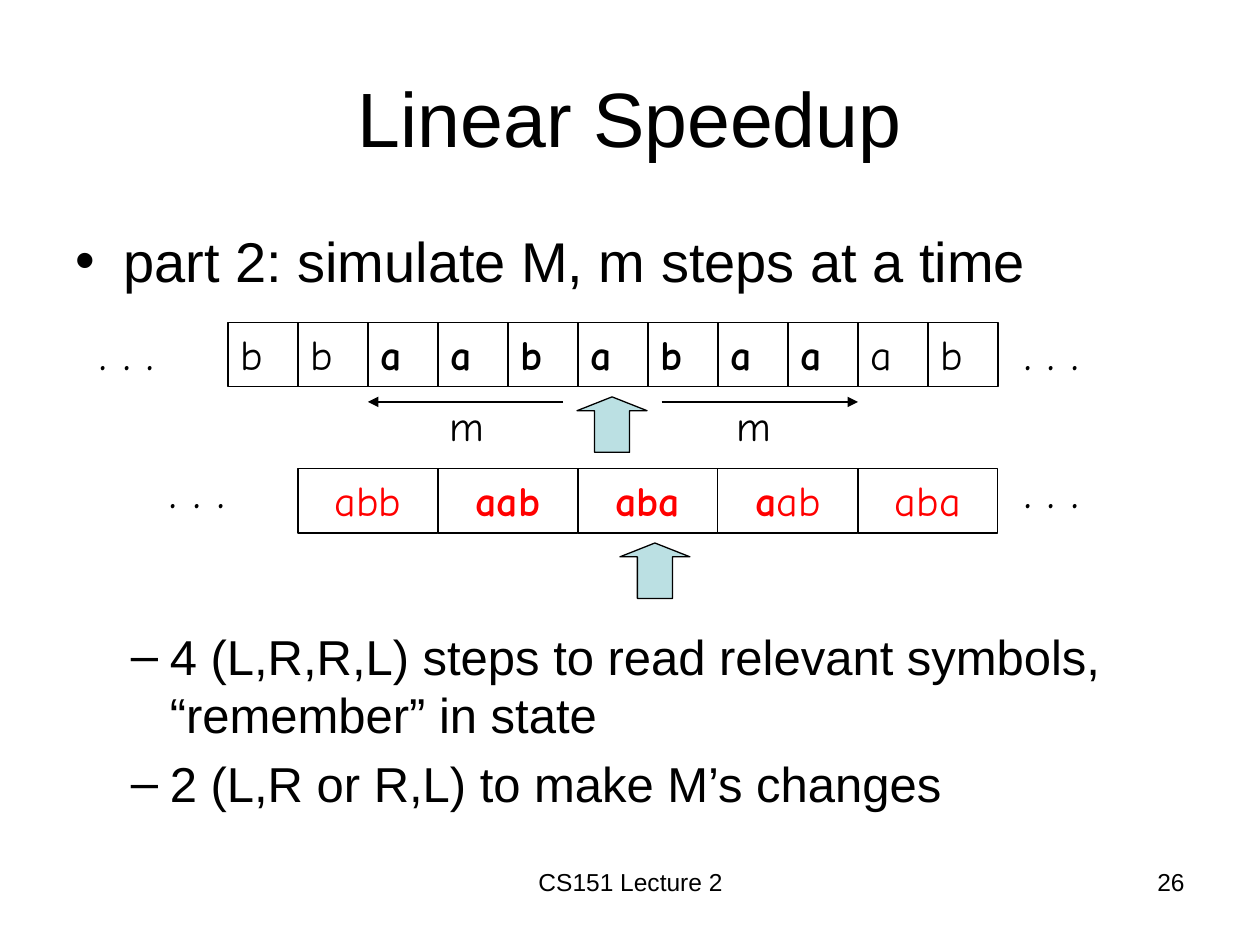
"""Build the Linear Speedup slide: a tape, its packed encoding and the step counts."""
from lxml.etree import SubElement
from pptx import Presentation
from pptx.dml.color import RGBColor
from pptx.enum.shapes import MSO_CONNECTOR, MSO_SHAPE
from pptx.enum.text import MSO_ANCHOR, PP_ALIGN
from pptx.oxml.ns import qn
from pptx.util import Inches, Pt

THEME = {
    "black": RGBColor(0, 0, 0),
    "red": RGBColor(255, 0, 0),
    "pale": RGBColor.from_string("BBE0E3"),
    "line": Pt(0.75),
    "title": {"name": "Arial", "size": Pt(44)},
    "body": {"name": "Arial", "size": Pt(32)},
    "sub": {"name": "Arial", "size": Pt(28)},
    "footer": {"name": "Arial", "size": Pt(14)},
    "symbol": {"name": "Comic Neue", "size": Pt(24)},
    "dots": {"name": "Comic Neue", "size": Pt(28)},
}
LEFT, CENTER, RIGHT = PP_ALIGN.LEFT, PP_ALIGN.CENTER, PP_ALIGN.RIGHT

BULLETS = [
    ((0.5, 1.75, 9, 0.83), "body", ("•", 0, 0.38, -0.38),
     ["part 2: simulate M, m steps at a time"]),
    ((0.44, 4.92, 9, 1.67), "sub", ("–", 1, 0.81, -0.31),
     ["4 (L,R,R,L) steps to read relevant symbols, “remember” in state",
      "2 (L,R or R,L) to make M’s changes"]),
]
LABELS = [
    ("Linear Speedup", (0.5, 0.3, 9, 1.25), "title", CENTER, MSO_ANCHOR.MIDDLE),
    ("CS151 Lecture 2", (3.42, 6.83, 3.17, 0.52), "footer", CENTER, MSO_ANCHOR.TOP),
    ("26", (7.17, 6.83, 2.33, 0.52), "footer", RIGHT, MSO_ANCHOR.TOP),
]
CELL, CELL_H, TAPE_RIGHT = 5 / 9, 0.51, 7.92
TAPES = [
    {"top": 2.56, "span": 1, "color": "black", "align": LEFT, "dots": (0.69, 2.5),
     "cells": [("b", ""), ("b", ""), *[(c, "") [::-1] for c in "aababaa"],
               ("a", ""), ("b", "")]},
    {"top": 3.72, "span": 2, "color": "red", "align": CENTER, "dots": (1.25, 3.6),
     "cells": [("abb", ""), ("", "aab"), ("", "aba"), ("ab", "a"), ("aba", "")]},
]
DOTS_RIGHT = 8.03
HEADS = [(4.58, 3.15), (4.92, 4.31)]
SPANS = [(4.47, 2.92, 3.47), (5.25, 6.81, 5.75)]
SPAN_Y = 3.19


def add_run(p, text, style, color="black", bold=False):
    r = p.add_run()
    r.text = text
    for key, value in {**THEME[style], "bold": bold}.items():
        setattr(r.font, key, value)
    r.font.color.rgb = THEME[color]


def space_before(p, percent):
    spc = SubElement(p._p.get_or_add_pPr(), qn("a:spcBef"))
    SubElement(spc, qn("a:spcPct"), val=str(percent * 1000))


def add_label(s, text, box, style, align=LEFT, anchor=MSO_ANCHOR.TOP, wrap=True, before=0):
    tf = s.shapes.add_textbox(*map(Inches, box)).text_frame
    tf.word_wrap, tf.vertical_anchor = wrap, anchor
    p = tf.paragraphs[0]
    p.alignment = align
    space_before(p, before)
    add_run(p, text, style)


def add_bullets(s, box, style, bullet, lines):
    char, level, margin, indent = bullet
    tf = s.shapes.add_textbox(*map(Inches, box)).text_frame
    tf.word_wrap = True
    for i, line in enumerate(lines):
        p = tf.add_paragraph() if i else tf.paragraphs[0]
        p.level = level
        pPr = p._p.get_or_add_pPr()
        pPr.set("marL", str(Inches(margin)))
        pPr.set("indent", str(Inches(indent)))
        space_before(p, 20)
        SubElement(pPr, qn("a:buFont"), typeface="Arial")
        SubElement(pPr, qn("a:buChar"), char=char)
        add_run(p, line, style)


def add_outlined(s, kind, box, fill=None):
    sp = s.shapes.add_shape(kind, *map(Inches, box))
    sp.shadow.inherit = False
    if fill:
        sp.fill.solid()
        sp.fill.fore_color.rgb = THEME[fill]
    else:
        sp.fill.background()
    sp.line.color.rgb, sp.line.width = THEME["black"], THEME["line"]
    return sp


def add_tape(s, tape):
    width = CELL * tape["span"]
    left = TAPE_RIGHT - width * len(tape["cells"])
    for i, (plain, bold) in enumerate(tape["cells"]):
        sp = add_outlined(s, MSO_SHAPE.RECTANGLE, (left + i * width, tape["top"], width, CELL_H))
        tf = sp.text_frame
        tf.vertical_anchor = MSO_ANCHOR.TOP
        p = tf.paragraphs[0]
        p.alignment = tape["align"]
        space_before(p, 50)
        for text, heavy in ((bold, True), (plain, False)):
            if text:
                add_run(p, text, "symbol", tape["color"], heavy)
    x, y = tape["dots"]
    for dots_left in (x, DOTS_RIGHT):
        add_label(s, ". . .", (dots_left, y, 1.22, 0.57), "dots", before=50)


def add_span(s, start, end, label_left):
    ends = map(Inches, (start, SPAN_Y, end, SPAN_Y))
    c = s.shapes.add_connector(MSO_CONNECTOR.STRAIGHT, *ends)
    c.line.color.rgb, c.line.width = THEME["black"], THEME["line"]
    SubElement(c.line._get_or_add_ln(), qn("a:tailEnd"), type="triangle")
    SubElement(c._element.spPr, qn("a:effectLst"))
    add_label(s, "m", (label_left, 3.12, 0.46, 0.5), "symbol", wrap=False)


def main():
    prs = Presentation()
    prs.slide_width, prs.slide_height = Inches(10), Inches(7.5)
    s = prs.slides.add_slide(prs.slide_layouts[6])
    for label in LABELS:
        add_label(s, *label)
    for block in BULLETS:
        add_bullets(s, *block)
    for tape in TAPES:
        add_tape(s, tape)
    for x, y in HEADS:
        sp = add_outlined(s, MSO_SHAPE.UP_ARROW, (x, y, CELL, 0.44), "pale")
        sp.adjustments[0], sp.adjustments[1] = 0.5, 0.25
    for span in SPANS:
        add_span(s, *span)
    prs.save("out.pptx")


if __name__ == "__main__":
    main()
